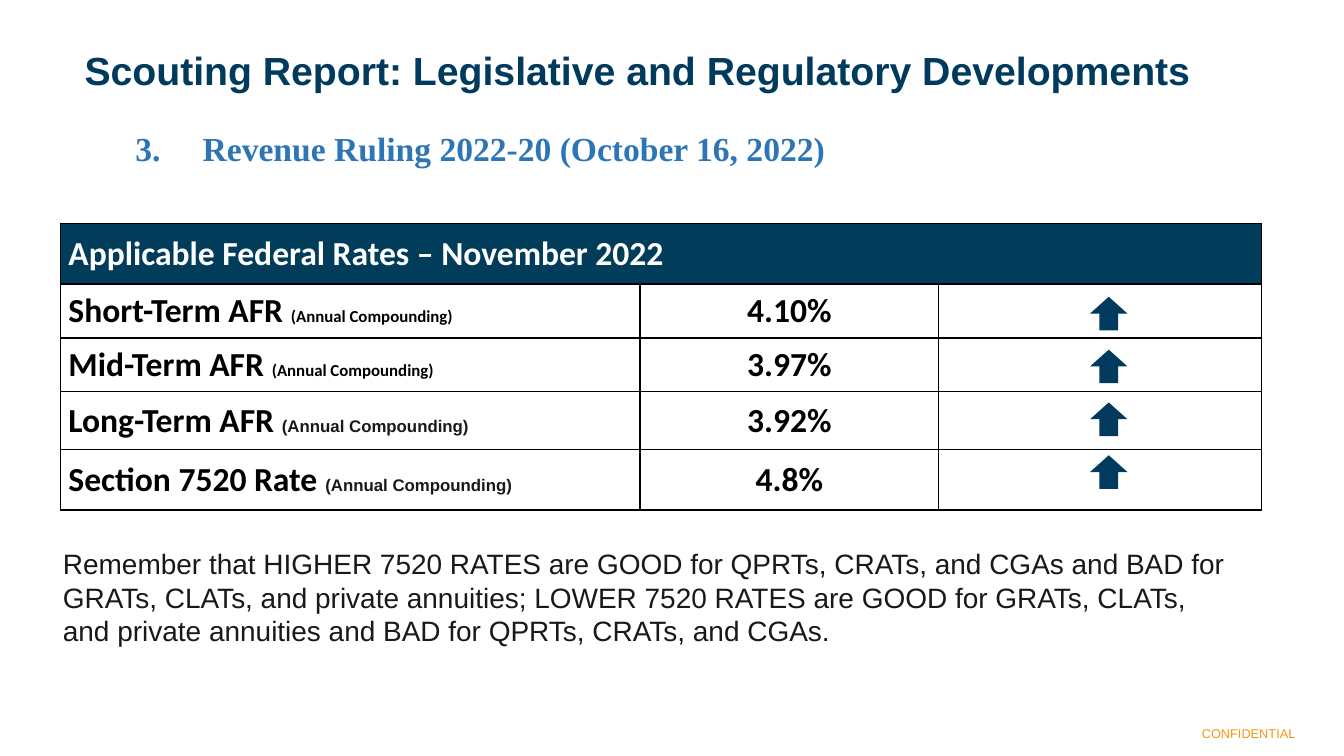
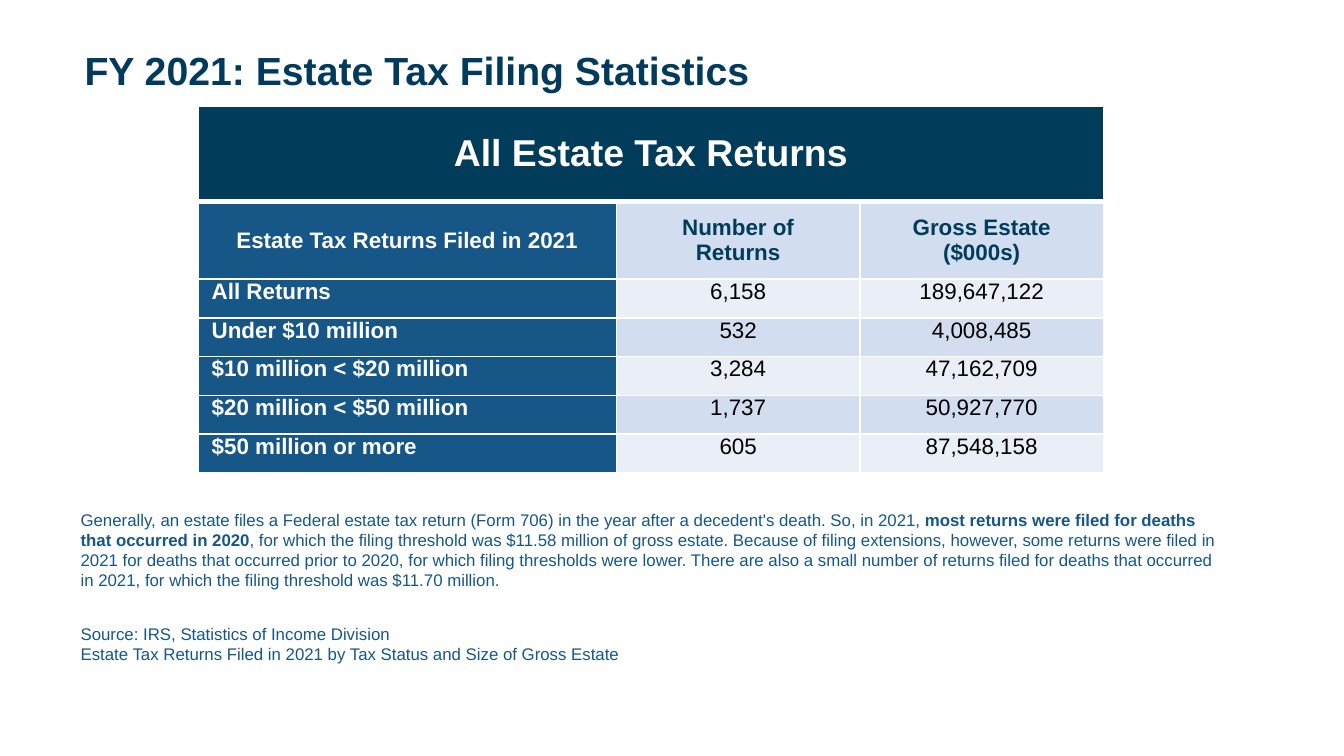
"""Build two slides on federal rates and estate tax filing statistics."""
from dataclasses import dataclass

from lxml import etree
from pptx import Presentation
from pptx.dml.color import RGBColor
from pptx.enum.shapes import MSO_SHAPE
from pptx.enum.text import MSO_ANCHOR, PP_ALIGN
from pptx.oxml.ns import qn
from pptx.util import Pt

UP_ARROW = MSO_SHAPE.UP_ARROW
TOP, MIDDLE = MSO_ANCHOR.TOP, MSO_ANCHOR.MIDDLE
LEFT, CENTER, RIGHT = PP_ALIGN.LEFT, PP_ALIGN.CENTER, PP_ALIGN.RIGHT
SIDES = ("L", "R", "T", "B")


@dataclass(frozen=True)
class TextStyle:
    size: float
    color: str
    bold: bool = False
    font: str = "Arial"


@dataclass(frozen=True)
class Theme:
    navy: str = "003A5D"
    band: str = "013C5A"
    blue: str = "165788"
    pale: str = "D2DEEF"
    paler: str = "EAEFF7"
    black: str = "000000"
    white: str = "FFFFFF"
    title: TextStyle = TextStyle(21, "003A5D", True)
    heading: TextStyle = TextStyle(18, "2E75B6", True, "Times New Roman")
    body: TextStyle = TextStyle(15, "191919")
    footer: TextStyle = TextStyle(6.8, "F89510")
    rate_header: TextStyle = TextStyle(18, "FFFFFF", True, "Calibri")
    rate: TextStyle = TextStyle(18, "000000", True, "Calibri")
    rate_note: TextStyle = TextStyle(9, "000000", True, "Calibri")
    rate_note_arial: TextStyle = TextStyle(9, "191919", True)
    filing_header: TextStyle = TextStyle(20, "FFFFFF", True)
    filing_label: TextStyle = TextStyle(12, "FFFFFF", True)
    filing_column: TextStyle = TextStyle(12, "013C5A", True)
    filing_value: TextStyle = TextStyle(12, "000000")
    note: TextStyle = TextStyle(9, "165788")
    note_bold: TextStyle = TextStyle(9, "165788", True)


class Deck:
    def __init__(self, theme):
        self.theme = theme
        self.presentation = Presentation()
        self.presentation.slide_width = Pt(720)
        self.presentation.slide_height = Pt(405)
        self.slide = None

    def add_slide(self, title):
        layout = self.presentation.slide_layouts[6]
        self.slide = self.presentation.slides.add_slide(layout)
        box = self.text((38.2, 21.6, 632, 35.3), [[(title, self.theme.title)]], anchor=MIDDLE)
        box.text_frame.paragraphs[0].line_spacing = 0.9

    def add_runs(self, paragraph, runs, align=LEFT):
        paragraph.alignment = align
        for text, style in runs:
            for index, line in enumerate(text.split("\n")):
                if index:
                    paragraph.add_line_break()
                run = paragraph.add_run()
                run.text = line
                run.font.size = Pt(style.size)
                run.font.name = style.font
                run.font.bold = style.bold
                run.font.color.rgb = RGBColor.from_string(style.color)

    def text(self, place, paragraphs, align=LEFT, anchor=TOP, inset=(7.2, 3.6), gap=(0, 0), hanging=0):
        box = self.slide.shapes.add_textbox(*map(Pt, place))
        frame = box.text_frame
        frame.word_wrap = True
        frame.vertical_anchor = anchor
        frame.margin_left = frame.margin_right = Pt(inset[0])
        frame.margin_top = frame.margin_bottom = Pt(inset[1])
        for index, runs in enumerate(paragraphs):
            paragraph = frame.add_paragraph() if index else frame.paragraphs[0]
            if hanging:
                properties = paragraph._p.get_or_add_pPr()
                properties.set("marL", str(Pt(hanging)))
                properties.set("indent", str(-Pt(hanging)))
            if index:
                paragraph.space_before = Pt(gap[0])
            paragraph.space_after = Pt(gap[1])
            self.add_runs(paragraph, runs, align)
        return box

    def arrow(self, left, top):
        shape = self.slide.shapes.add_shape(UP_ARROW, Pt(left), Pt(top), Pt(20), Pt(18))
        shape.shadow.inherit = False
        shape.fill.solid()
        shape.fill.fore_color.rgb = RGBColor.from_string(self.theme.navy)
        shape.line.fill.background()

    def table(self, left, top, columns, rows):
        frame = self.slide.shapes.add_table(
            len(rows), len(columns), Pt(left), Pt(top), Pt(sum(columns)), Pt(sum(rows)))
        table = frame.table
        table.first_row = table.horz_banding = False
        for column, width in zip(table.columns, columns):
            column.width = Pt(width)
        for row, height in zip(table.rows, rows):
            row.height = Pt(height)
        table.cell(0, 0).merge(table.cell(0, len(columns) - 1))
        return table

    def cell(self, cell, runs, border, fill=None, align=LEFT, anchor=MIDDLE, inset=7.2, widths=(1, 1, 1, 1)):
        cell.margin_left = cell.margin_right = Pt(inset)
        cell.margin_top = cell.margin_bottom = Pt(0)
        cell.vertical_anchor = anchor
        properties = cell._tc.get_or_add_tcPr()
        for side, width in zip(SIDES, widths):
            line = etree.SubElement(properties, qn(f"a:ln{side}"), w=str(Pt(width)))
            solid = etree.SubElement(line, qn("a:solidFill"))
            etree.SubElement(solid, qn("a:srgbClr"), val=border)
        if fill:
            cell.fill.solid()
            cell.fill.fore_color.rgb = RGBColor.from_string(fill)
        else:
            cell.fill.background()
        self.add_runs(cell.text_frame.paragraphs[0], runs, align)


def build_rates(deck):
    theme = deck.theme
    deck.add_slide("Scouting Report: Legislative and Regulatory Developments")
    deck.text((65.5, 64.8, 518, 29), [[("3.\tRevenue Ruling 2022-20 (October 16, 2022)", theme.heading)]],
              hanging=36)
    table = deck.table(32.4, 119.8, (310.5, 160, 173), (32.4, 28.8, 28.8, 31, 32.4))
    header = [("Applicable Federal Rates – November 2022", theme.rate_header)]
    for column in range(3):
        deck.cell(table.cell(0, column), [] if column else header, theme.black, theme.band, inset=4.3)
    rates = (
        ("Short-Term AFR ", theme.rate_note, "4.10%"),
        ("Mid-Term AFR ", theme.rate_note, "3.97%"),
        ("Long-Term AFR ", theme.rate_note_arial, "3.92%"),
        ("Section 7520 Rate ", theme.rate_note_arial, "4.8%"),
    )
    for index, (name, note_style, rate) in enumerate(rates):
        label = [(name, theme.rate), ("(Annual Compounding)", note_style)]
        contents = ((label, LEFT), ([(rate, theme.rate)], CENTER), ([], CENTER))
        for column, (runs, align) in enumerate(contents):
            deck.cell(table.cell(index + 1, column), runs, theme.black, align=align, inset=4.3)
        deck.arrow(584, 159 + 28.3 * index)
    deck.text((26.6, 289.4, 644, 62), [[(
        "Remember that HIGHER 7520 RATES are GOOD for QPRTs, CRATs, and CGAs and BAD for GRATs, CLATs, "
        "and private annuities; LOWER 7520 RATES are GOOD for GRATs, CLATs, and private annuities "
        "and BAD for QPRTs, CRATs, and CGAs.", theme.body)]])
    deck.text((504, 388.8, 190, 8), [[("CONFIDENTIAL", theme.footer)]], RIGHT, inset=(0, 0))


def build_filings(deck):
    theme = deck.theme
    deck.add_slide("FY 2021: Estate Tax Filing Statistics")
    table = deck.table(106.2, 57, (224, 130.5, 130.5), (51, 41.5) + (20.8,) * 5)
    header = [("All Estate Tax Returns", theme.filing_header)]
    for column in range(3):
        deck.cell(table.cell(0, column), [] if column else header, theme.white, theme.band, CENTER,
                  widths=(1, 1, 1, 3))
    filings = (
        ("Estate Tax Returns Filed in 2021", "Number of\nReturns", "Gross Estate\n($000s)"),
        ("All Returns", "6,158", "189,647,122"),
        ("Under $10 million", "532", "4,008,485"),
        ("$10 million < $20 million", "3,284", "47,162,709"),
        ("$20 million < $50 million", "1,737", "50,927,770"),
        ("$50 million or more", "605", "87,548,158"),
    )
    for row, texts in enumerate(filings, 1):
        is_heading = row == 1
        value_style = theme.filing_column if is_heading else theme.filing_value
        value_fill = theme.pale if row % 2 else theme.paler
        for column, text in enumerate(texts):
            deck.cell(table.cell(row, column),
                      [(text, value_style if column else theme.filing_label)],
                      theme.white,
                      value_fill if column else theme.blue,
                      CENTER if column or is_heading else LEFT,
                      MIDDLE if is_heading else TOP,
                      widths=(1, 1, 3 if is_heading else 1, 1))
    explanation = [
        ("Generally, an estate files a Federal estate tax return (Form 706) in the year after a "
         "decedent's death. So, in 2021, ", theme.note),
        ("most returns were filed for deaths that occurred in 2020", theme.note_bold),
        (", for which the filing threshold was $11.58 million of gross estate. Because of filing "
         "extensions, however, some returns were filed in 2021 for deaths that occurred prior to 2020, "
         "for which filing thresholds were lower. There are also a small number of returns filed for "
         "deaths that occurred in 2021, for which the filing threshold was $11.70 million.", theme.note),
    ]
    source = [("Source: IRS, Statistics of Income Division\n"
               "Estate Tax Returns Filed in 2021 by Tax Status and Size of Gross Estate", theme.note)]
    deck.text((38.2, 270, 620, 26.6), [explanation, source], inset=(5, 2.9), gap=(12, 6))


def main():
    deck = Deck(Theme())
    build_rates(deck)
    build_filings(deck)
    deck.presentation.save("out.pptx")


if __name__ == "__main__":
    main()
